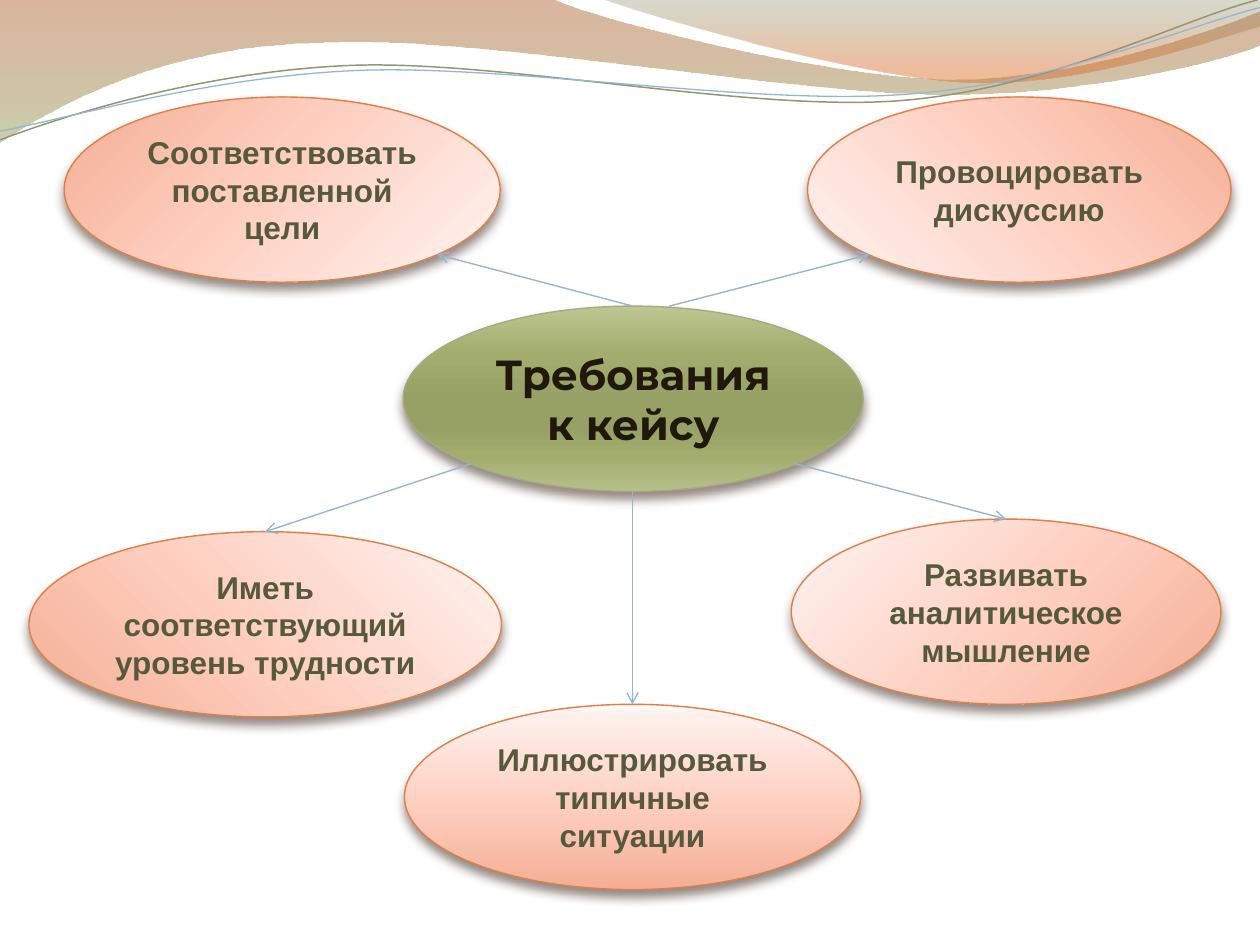
from pptx import Presentation
from pptx.dml.color import RGBColor
from pptx.enum.shapes import MSO_CONNECTOR, MSO_SHAPE
from pptx.enum.text import MSO_ANCHOR, PP_ALIGN
from pptx.oxml import parse_xml
from pptx.oxml.ns import nsdecls
from pptx.util import Inches, Pt

NS = nsdecls("a")


def color(value):
    return RGBColor.from_string(value)


def write(sp, text, size=18, font="Arial", fill="565A3C", outline=None):
    tf = sp.text_frame
    tf.word_wrap = True
    tf.vertical_anchor = MSO_ANCHOR.MIDDLE
    for i, line in enumerate(text.split("\n")):
        p = tf.add_paragraph() if i else tf.paragraphs[0]
        p.alignment = PP_ALIGN.CENTER
        r = p.add_run()
        r.text = line
        r.font.size, r.font.name, r.font.bold = Pt(size), font, True
        r.font.color.rgb = color(fill)
        if outline:
            r._r.get_or_add_rPr().insert(0, parse_xml(
                f'<a:ln {NS} w="9525"><a:solidFill><a:srgbClr val="{outline}"/>'
                '</a:solidFill></a:ln>'))


prs = Presentation()
prs.slide_width, prs.slide_height = Inches(10), Inches(7.5)
s = prs.slides.add_slide(prs.slide_layouts[6])
col, row = prs.slide_width / 10, prs.slide_height / 7.5

# Gradients: (position %, colour, opacity %)
tan_wave = [(0, "AF5C29", 45), (100, "9DA66B", 55)]
orange_wave = [(0, "7D835B", 30), (80, "DD6B24", 45)]
green = [(0, "BEC692", 100), (25, "A3AD6E", 100), (50, "97A065", 100),
         (65, "97A065", 100), (80, "A2AC6D", 100), (100, "B7BF8B", 100)]
peach = [(0, "F3AE94", 100), (43, "FECDBD", 100),
         (93, "FEEFEB", 100), (100, "FFFAF8", 100)]
painted = []  # shape, gradient, angle (None = radial from bottom right)

# Header waves: pairs are corners, sixes are curves
waves = [
    ([(0, 0), (4.4, 0), (4.76, 0.17, 6.64, 0.63, 7.58, 0.63),
      (8.53, 0.63, 9.58, 0.26, 10, 0.09), (10, 0.36),
      (9.83, 0.44, 8.7, 0.76, 7.46, 0.75), (6.22, 0.75, 3.82, 0.28, 2.57, 0.34),
      (1.29, 0.36, 0.46, 0.83, 0, 1.13)], tan_wave, None, 0),
    ([(4.79, 0), (5.09, 0.11, 6.82, 0.62, 7.69, 0.65),
      (8.56, 0.69, 9.61, 0.32, 10, 0.21), (10, 0)], orange_wave, None, 0),
    ([(0, 1.11), (0.48, 0.93, 1.58, 0.57, 2.77, 0.52),
      (3.95, 0.47, 5.93, 0.89, 7.13, 0.8),
      (8.33, 0.71, 9.38, 0.15, 9.98, 0)], None, "929772", 0.85),
    ([(0, 1.04), (0.47, 0.96, 1.64, 0.61, 2.83, 0.56),
      (4.03, 0.51, 5.97, 0.84, 7.17, 0.75),
      (8.36, 0.67, 9.41, 0.21, 10, 0.06)], None, "94B6D2", 0.75),
]
for (start, *segments), gradient, line, width in waves:
    points = [(int(x * col), int(y * row)) for seg in (start, *segments)
              for x, y in zip(seg[::2], seg[1::2])]
    builder = s.shapes.build_freeform(*points[0], scale=1.0)
    builder.add_line_segments(points[1:], close=gradient is not None)
    sp = builder.convert_to_shape()
    # Join each three points of a curve into one Bézier segment
    steps = iter(sp._element.findall(".//{*}lnTo"))
    for seg in segments:
        step = next(steps)
        if len(seg) == 6:
            curve = parse_xml(f'<a:cubicBezTo {NS}/>')
            step.addprevious(curve)
            for part in (step, next(steps), next(steps)):
                curve.append(part[0])
                part.getparent().remove(part)
    sp.shadow.inherit = False
    if gradient:
        sp.line.fill.background()
        painted.append((sp, gradient, 90))
    else:
        sp.fill.background()
        sp.line.color.rgb, sp.line.width = color(line), Pt(width)

# Ellipses: the topic and its five requirements
title_style = dict(size=24, font="Montserrat", fill="20190B", outline="264A3E")
ellipses = [
    ("topic", 3.2, 2.43, 3.65, "Требования к кейсу", green, 90, "A5AB81", title_style),
    ("level", 0.23, 4.22, 3.75, "Иметь соответствующий уровень трудности",
     peach, 315, "DD8047", {}),
    ("goal", 0.51, 0.77, 3.46, "Соответствовать\nпоставленной цели",
     peach, 45, "DD8047", {}),
    ("examples", 3.21, 5.59, 3.62, "Иллюстрировать типичные ситуации",
     peach, 270, "DD8047", {}),
    ("thinking", 6.28, 4.12, 3.41, "Развивать аналитическое мышление",
     peach, None, "DD8047", {}),
    ("debate", 6.41, 0.77, 3.36, "Провоцировать дискуссию",
     peach, 135, "DD8047", {}),
]
nodes = {}
for name, x, y, w, text, gradient, angle, line, style in ellipses:
    sp = s.shapes.add_shape(MSO_SHAPE.OVAL, int(x * col), int(y * row),
                            int(w * col), int(1.47 * row))
    sp.line.color.rgb, sp.line.width = color(line), Pt(0.79)
    sp.shadow.inherit = False
    sp._element.spPr.find("{*}effectLst").append(parse_xml(
        f'<a:outerShdw {NS} blurRad="{Pt(6)}" dist="{Pt(4)}" dir="5400000" '
        'rotWithShape="0"><a:srgbClr val="4E3B30"><a:alpha val="60000"/>'
        '</a:srgbClr></a:outerShdw>'))
    write(sp, text, **style)
    painted.append((sp, gradient, angle))
    nodes[name] = sp

# Gradient fills
for sp, gradient, angle in painted:
    stops = "".join(
        f'<a:gs pos="{pos * 1000}"><a:srgbClr val="{value}">'
        f'<a:alpha val="{alpha * 1000}"/></a:srgbClr></a:gs>'
        for pos, value, alpha in gradient)
    if angle is None:
        direction = ('<a:path path="circle"><a:fillToRect l="100000" t="100000"/>'
                     '</a:path>')
    else:
        direction = f'<a:lin ang="{angle * 60000}" scaled="0"/>'
    sp._element.spPr.insert(2, parse_xml(
        f'<a:gradFill {NS} rotWithShape="1"><a:gsLst>{stops}</a:gsLst>'
        f'{direction}</a:gradFill>'))

# Arrows from the topic; True marks an end at the top of an ellipse
arrows = [
    ("examples", 5.02, 3.9, 5.02, 5.59, False, True),
    ("debate", 5.31, 2.43, 6.9, 2.02, False, False),
    ("goal", 5.03, 2.43, 3.47, 2.02, True, False),
    ("level", 3.74, 3.68, 2.1, 4.22, False, True),
    ("thinking", 6.31, 3.68, 7.99, 4.12, False, True),
]
for target, x1, y1, x2, y2, from_top, to_top in arrows:
    arrow = s.shapes.add_connector(MSO_CONNECTOR.STRAIGHT, int(x1 * col),
                                   int(y1 * row), int(x2 * col), int(y2 * row))
    if from_top:
        arrow.begin_connect(nodes["topic"], 0)
    if to_top:
        arrow.end_connect(nodes[target], 0)
    arrow.line.color.rgb, arrow.line.width = color("94B6D2"), Pt(0.79)
    arrow.line._get_or_add_ln().append(parse_xml(f'<a:tailEnd {NS} type="arrow"/>'))
    arrow._element.spPr.append(parse_xml(f'<a:effectLst {NS}/>'))

prs.save("out.pptx")
